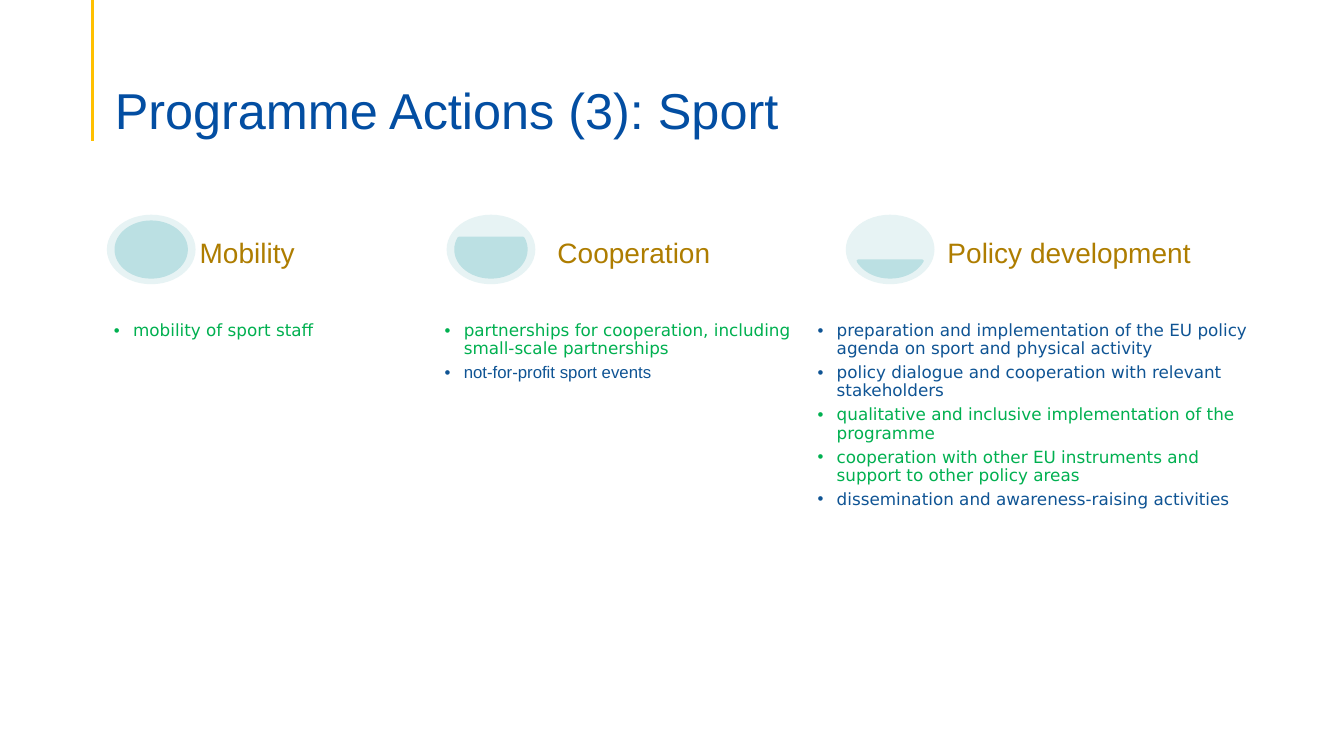
from dataclasses import dataclass

from lxml.etree import SubElement
from pptx import Presentation
from pptx.dml.color import RGBColor
from pptx.enum.shapes import MSO_CONNECTOR, MSO_SHAPE
from pptx.enum.text import MSO_ANCHOR
from pptx.oxml.ns import qn
from pptx.slide import Slide
from pptx.text.text import TextFrame, _Paragraph
from pptx.util import Inches, Pt

WIDTH, HEIGHT = Inches(13.33), Inches(7.5)
BLUE, NAVY, GREEN = "034EA2", "0F5494", "00B050"
GOLD, YELLOW = "AE7D00", "FFC000"
PALE_TEAL, TEAL = "E7F3F4", "BBE0E3"
ARIAL, DEJAVU = "Arial", "DejaVu Sans"

# Places and sizes are percentages of the slide's width and height.
GAUGE_TOP, GAUGE_WIDTH, GAUGE_HEIGHT = 28.4, 6.6, 9.2
LEVEL_INSET, LEVEL_TOP, LEVEL_WIDTH, LEVEL_HEIGHT = 0.68, 29.35, 5.25, 7.33
HEADING_TOP, HEADING_WIDTH, HEADING_HEIGHT = 29.3, 19.5, 6.9
LIST_TOP = 42.35


@dataclass(frozen=True)
class Item:
    text: str
    color: str
    font: str = DEJAVU


@dataclass(frozen=True)
class Action:
    heading: str
    gauge_left: float
    level_angles: tuple[float, float]
    heading_left: float
    list_left: float
    list_width: float
    list_height: float
    items: tuple[Item, ...]


ACTIONS = (
    Action("Mobility", 7.95, (270, 270), 14.55, 8.33, 23.4, 38.93, (
        Item("mobility of sport staff", GREEN),
    )),
    Action("Cooperation", 33.23, (340.53, 199.47), 41.18, 32.93, 26.33, 38.93, (
        Item("partnerships for cooperation, including small-scale partnerships", GREEN),
        Item("not-for-profit sport events", NAVY, ARIAL),
    )),
    Action("Policy development", 62.93, (19.47, 160.53), 70.2, 60.68, 33.75, 50.93, (
        Item("preparation and implementation of the EU policy agenda on sport "
             "and physical activity", NAVY),
        Item("policy dialogue and cooperation with relevant stakeholders", NAVY),
        Item("qualitative and inclusive implementation of the programme", GREEN),
        Item("cooperation with other EU instruments and support to other policy areas", GREEN),
        Item("dissemination and awareness-raising activities", NAVY),
    )),
)


def color_of(value: str) -> RGBColor:
    return RGBColor.from_string(value)


def across(share: float) -> int:
    return round(WIDTH * share / 100)


def down(share: float) -> int:
    return round(HEIGHT * share / 100)


def area(left: float, top: float, width: float, height: float) -> tuple[int, int, int, int]:
    return across(left), down(top), across(width), down(height)


def add_text_frame(slide: Slide, box: tuple[int, int, int, int], margin: float,
                   anchor: MSO_ANCHOR) -> TextFrame:
    frame = slide.shapes.add_textbox(*box).text_frame
    frame.word_wrap = True
    frame.vertical_anchor = anchor
    frame.margin_left = frame.margin_right = Inches(margin)
    frame.margin_top = frame.margin_bottom = Inches(margin)
    return frame


def style_paragraph(paragraph: _Paragraph, size: float, color: str, font: str) -> None:
    paragraph.line_spacing = 0.9
    for run in paragraph.runs:
        run.font.size = Pt(size)
        run.font.name = font
        run.font.color.rgb = color_of(color)


def add_bullet(paragraph: _Paragraph) -> None:
    """Give the paragraph a hanging bullet and a gap of 35% after it."""
    properties = paragraph._p.get_or_add_pPr()
    properties.set("marL", str(Inches(0.19)))
    properties.set("indent", str(-Inches(0.19)))
    space_after = SubElement(properties, qn("a:spcAft"))
    SubElement(space_after, qn("a:spcPct")).set("val", "35000")
    SubElement(properties, qn("a:buFont")).set("typeface", ARIAL)
    SubElement(properties, qn("a:buChar")).set("char", "•")


def add_title(slide: Slide) -> None:
    rule = slide.shapes.add_connector(
        MSO_CONNECTOR.STRAIGHT, across(6.9), 0, across(6.9), down(18.67))
    rule.line.color.rgb = color_of(YELLOW)
    rule.line.width = Pt(2.25)
    SubElement(rule._element.spPr, qn("a:effectLst"))

    frame = add_text_frame(slide, area(7.8, 7.07, 86.25, 11.47), 0.1, MSO_ANCHOR.BOTTOM)
    frame.margin_top, frame.margin_bottom = Inches(0.05), 0
    frame.text = "Programme Actions (3): Sport"
    style_paragraph(frame.paragraphs[0], 36, BLUE, ARIAL)


def add_gauge(slide: Slide, action: Action) -> None:
    """Draw a disc filled up to the level given by the chord's angles."""
    disc = slide.shapes.add_shape(
        MSO_SHAPE.OVAL, *area(action.gauge_left, GAUGE_TOP, GAUGE_WIDTH, GAUGE_HEIGHT))
    disc.shadow.inherit = False
    disc.fill.solid()
    disc.fill.fore_color.rgb = color_of(PALE_TEAL)
    disc.line.fill.background()

    level = slide.shapes.add_shape(
        MSO_SHAPE.CHORD,
        *area(action.gauge_left + LEVEL_INSET, LEVEL_TOP, LEVEL_WIDTH, LEVEL_HEIGHT))
    level.shadow.inherit = False
    level.fill.solid()
    level.fill.fore_color.rgb = color_of(TEAL)
    level.line.color.rgb = color_of(TEAL)
    level.line.width = Pt(2)
    for index, degrees in enumerate(action.level_angles):
        level.adjustments[index] = degrees * 0.6


def add_heading(slide: Slide, action: Action) -> None:
    box = area(action.heading_left, HEADING_TOP, HEADING_WIDTH, HEADING_HEIGHT)
    frame = add_text_frame(slide, box, 0.04, MSO_ANCHOR.BOTTOM)
    frame.text = action.heading
    style_paragraph(frame.paragraphs[0], 20, GOLD, ARIAL)


def add_list(slide: Slide, action: Action) -> None:
    box = area(action.list_left, LIST_TOP, action.list_width, action.list_height)
    frame = add_text_frame(slide, box, 0.02, MSO_ANCHOR.TOP)
    frame.text = "\n".join(item.text for item in action.items)
    for paragraph, item in zip(frame.paragraphs, action.items):
        add_bullet(paragraph)
        style_paragraph(paragraph, 12, item.color, item.font)


def main() -> None:
    presentation = Presentation()
    presentation.slide_width, presentation.slide_height = WIDTH, HEIGHT
    slide = presentation.slides.add_slide(presentation.slide_layouts[6])
    add_title(slide)
    for action in ACTIONS:
        add_gauge(slide, action)
        add_heading(slide, action)
        add_list(slide, action)
    presentation.save("out.pptx")


if __name__ == "__main__":
    main()
